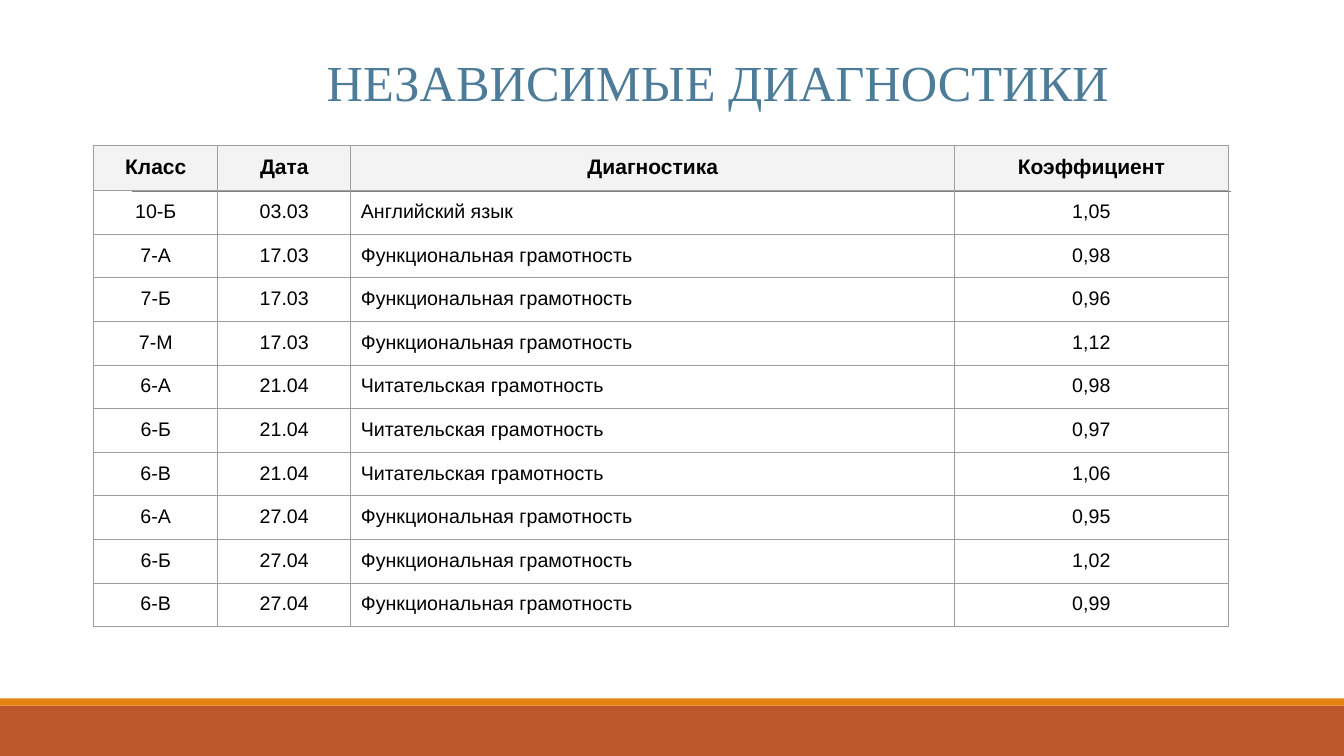
from typing import NamedTuple

from lxml import etree
from pptx import Presentation
from pptx import util as u
from pptx.dml.color import RGBColor
from pptx.enum import shapes, text
from pptx.oxml import ns

RUST = RGBColor(0xBD, 0x58, 0x2C)
ORANGE = RGBColor(0xE4, 0x83, 0x12)
RULE_GREY = RGBColor(0x7F, 0x7F, 0x7F)
BORDER_GREY = RGBColor(0x9E, 0x9E, 0x9E)
HEADER_GREY = RGBColor(0xF3, 0xF3, 0xF3)
TITLE_BLUE = RGBColor(0x4D, 0x7C, 0x99)
BLACK = RGBColor(0, 0, 0)

SLIDE_WIDTH = 13.33
TABLE_LEFT, TABLE_TOP, TABLE_HEIGHT = 0.93, 1.44, 4.78
HEADER_HEIGHT = 0.45
CELL_MARGIN = u.Inches(0.1)


class Band(NamedTuple):
    top: float
    height: float
    color: RGBColor


class Column(NamedTuple):
    heading: str
    width: float
    align: text.PP_ALIGN


class Result(NamedTuple):
    grade: str
    date: str
    subject: str
    coefficient: str


BANDS = [Band(7, 0.5, RUST), Band(6.93, 0.07, ORANGE)]
COLUMNS = [
    Column("Класс", 1.23, text.PP_ALIGN.CENTER),
    Column("Дата", 1.32, text.PP_ALIGN.CENTER),
    Column("Диагностика", 5.99, text.PP_ALIGN.LEFT),
    Column("Коэффициент", 2.71, text.PP_ALIGN.CENTER),
]
FUNCTIONAL = "Функциональная грамотность"
READING = "Читательская грамотность"
RESULTS = [
    Result("10-Б", "03.03", "Английский язык", "1,05"),
    Result("7-А", "17.03", FUNCTIONAL, "0,98"),
    Result("7-Б", "17.03", FUNCTIONAL, "0,96"),
    Result("7-М", "17.03", FUNCTIONAL, "1,12"),
    Result("6-А", "21.04", READING, "0,98"),
    Result("6-Б", "21.04", READING, "0,97"),
    Result("6-В", "21.04", READING, "1,06"),
    Result("6-А", "27.04", FUNCTIONAL, "0,95"),
    Result("6-Б", "27.04", FUNCTIONAL, "1,02"),
    Result("6-В", "27.04", FUNCTIONAL, "0,99"),
]


def add_band(slide, band: Band) -> None:
    bar = slide.shapes.add_shape(
        shapes.MSO_SHAPE.RECTANGLE, 0, u.Inches(band.top),
        u.Inches(SLIDE_WIDTH), u.Inches(band.height))
    bar.shadow.inherit = False
    bar.fill.solid()
    bar.fill.fore_color.rgb = band.color
    bar.line.fill.background()


def add_rule(slide) -> None:
    rule = slide.shapes.add_connector(
        shapes.MSO_CONNECTOR.STRAIGHT, u.Inches(1.31), u.Inches(1.9),
        u.Inches(12.21), u.Inches(1.9))
    rule.line.color.rgb = RULE_GREY
    rule.line.width = u.Pt(0.75)
    etree.SubElement(rule._element.spPr, ns.qn("a:effectLst"))


def format_title(title) -> None:
    title.left, title.top = u.Inches(1.08), u.Inches(0.5)
    title.width, title.height = u.Inches(12.08), u.Inches(0.62)
    frame = title.text_frame
    frame.text = "НЕЗАВИСИМЫЕ ДИАГНОСТИКИ"
    frame.margin_left = frame.margin_right = frame.margin_bottom = 0
    frame.margin_top = u.Inches(0.01)
    frame.vertical_anchor = text.MSO_ANCHOR.TOP
    frame.word_wrap = True
    heading = frame.paragraphs[0]
    heading.alignment = text.PP_ALIGN.CENTER
    font = heading.runs[0].font
    font.name, font.size = "Times New Roman", u.Pt(36)
    font.color.rgb = TITLE_BLUE


def add_borders(cell) -> None:
    properties = cell._tc.get_or_add_tcPr()
    for index, side in enumerate(("lnL", "lnR", "lnT", "lnB")):
        border = etree.Element(ns.qn(f"a:{side}"), w=str(u.Pt(0.75)))
        fill = etree.SubElement(border, ns.qn("a:solidFill"))
        etree.SubElement(fill, ns.qn("a:srgbClr"), val=str(BORDER_GREY))
        properties.insert(index, border)


def fill_cell(cell, content: str, align: text.PP_ALIGN, header: bool) -> None:
    cell.text_frame.text = content
    cell.margin_left = cell.margin_right = CELL_MARGIN
    cell.margin_top = cell.margin_bottom = CELL_MARGIN
    if header:
        cell.fill.solid()
        cell.fill.fore_color.rgb = HEADER_GREY
    else:
        cell.fill.background()
    paragraph = cell.text_frame.paragraphs[0]
    paragraph.alignment = align
    font = paragraph.runs[0].font
    font.name, font.size = "Arial", u.Pt(15 if header else 14)
    font.bold = header
    font.color.rgb = BLACK
    add_borders(cell)


def add_results(slide) -> None:
    table = slide.shapes.add_table(
        len(RESULTS) + 1, len(COLUMNS), u.Inches(TABLE_LEFT),
        u.Inches(TABLE_TOP), u.Inches(sum(c.width for c in COLUMNS)),
        u.Inches(TABLE_HEIGHT)).table
    table.horz_banding = False
    result_height = (TABLE_HEIGHT - HEADER_HEIGHT) / len(RESULTS)
    for row_index, row in enumerate(table.rows):
        row.height = u.Inches(result_height if row_index else HEADER_HEIGHT)
    for column_index, column in enumerate(COLUMNS):
        table.columns[column_index].width = u.Inches(column.width)
        fill_cell(table.cell(0, column_index), column.heading,
                  text.PP_ALIGN.CENTER, True)
        for row_index, result in enumerate(RESULTS, start=1):
            fill_cell(table.cell(row_index, column_index),
                      result[column_index], column.align, False)


def main() -> None:
    deck = Presentation()
    deck.slide_width, deck.slide_height = u.Inches(SLIDE_WIDTH), u.Inches(7.5)
    slide = deck.slides.add_slide(deck.slide_layouts.get_by_name("Title Only"))

    # Footer bands and rule under the table header
    for band in BANDS:
        add_band(slide, band)
    add_rule(slide)

    # Title and diagnostics table
    format_title(slide.shapes.title)
    add_results(slide)

    deck.save("out.pptx")


if __name__ == "__main__":
    main()
